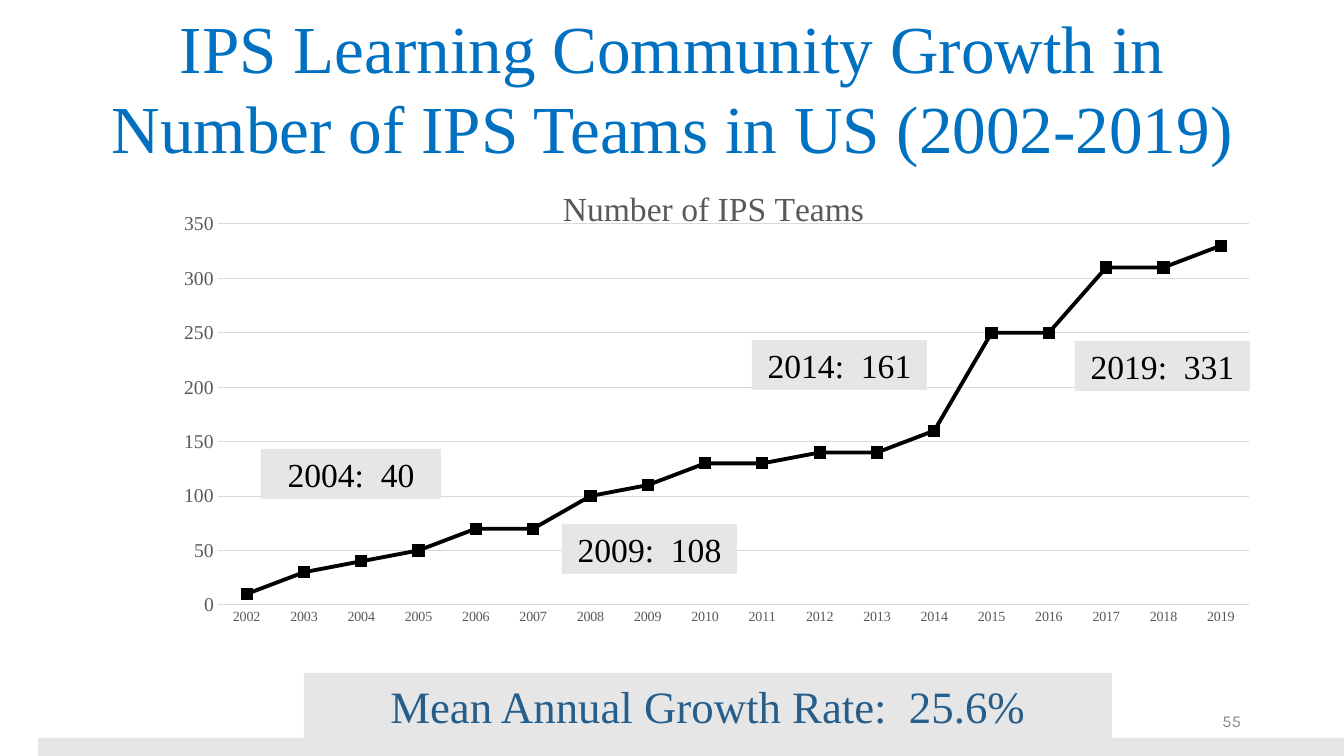
from lxml import etree
from pptx import Presentation
from pptx.chart.data import CategoryChartData
from pptx.dml.color import RGBColor
from pptx.enum.chart import XL_CHART_TYPE as ChartType, XL_MARKER_STYLE as Marker
from pptx.enum.chart import XL_TICK_MARK as Tick
from pptx.enum.shapes import MSO_SHAPE as Shape
from pptx.enum.text import MSO_ANCHOR as Anchor, PP_ALIGN as Align
from pptx.oxml.ns import qn
from pptx.util import Pt

PX = 12192000 / 1344
SERIF = "Times New Roman"
BLACK, GREY, RULE, PANEL = "000000", "595959", "D9D9D9", "E7E6E6"
TEAMS = [10, 30, 40, 50, 70, 70, 100, 110, 130, 130, 140, 140, 160,
         250, 250, 310, 310, 330]
FIRST_YEAR = 2002
LABELS = {"2004:  40": (261, 449, 180, 50), "2009:  108": (562, 524, 175, 50),
          "2019:  331": (1075, 341, 175, 50), "2014:  161": (752, 340, 175, 50)}


def emu(box):
    return [round(length * PX) for length in box]


def colour(code):
    return RGBColor.from_string(code)


def style(font, size, code, name=SERIF):
    font.size, font.name = Pt(size), name
    font.color.rgb = colour(code)


def write(frame, text, size, code, align=Align.CENTER, name=SERIF):
    frame.text = text
    frame.word_wrap = True
    frame.vertical_anchor = Anchor.MIDDLE
    for para in frame.paragraphs:
        para.alignment = align
        for span in para.runs:
            style(span.font, size, code, name)


def add_title(page, box, text):
    title = page.shapes.title
    title.left, title.top, title.width, title.height = emu(box)
    write(title.text_frame, text, 48, "0070C0")


def add_panel(page, box, text="", size=24, code=BLACK):
    panel = page.shapes.add_shape(Shape.RECTANGLE, *emu(box))
    panel.shadow.inherit = False
    panel.fill.solid()
    panel.fill.fore_color.rgb = colour(PANEL)
    panel.line.fill.background()
    if text:
        write(panel.text_frame, text, size, code)


def add_page_number(page, box, number):
    holder = page.shapes.add_textbox(*emu(box))
    write(holder.text_frame, number, 12, "8C8C8C", Align.RIGHT, "Karla")


def set_layout(parent, index, **settings):
    """Give a chart part a manual layout, as fractions of the chart."""
    for old in parent.findall(qn("c:layout")):
        parent.remove(old)
    layout = etree.Element(qn("c:layout"))
    manual = etree.SubElement(layout, qn("c:manualLayout"))
    for tag, value in settings.items():
        etree.SubElement(manual, qn(f"c:{tag}")).set("val", str(value))
    parent.insert(index, layout)


def add_growth_chart(page, box):
    data = CategoryChartData()
    data.categories = [str(FIRST_YEAR + i) for i in range(len(TEAMS))]
    data.add_series("Series 1", TEAMS)
    chart = page.shapes.add_chart(ChartType.LINE_MARKERS, *emu(box), data).chart
    style(chart.font, 10, BLACK, "Karla")
    chart.has_legend = False

    width, height = box[2:]
    heading = chart.chart_title
    heading.text_frame.text = "Number of IPS Teams"
    heading_font = heading.text_frame.paragraphs[0].runs[0].font
    style(heading_font, 24, GREY)
    heading_font.bold = False
    heading.include_in_layout = True
    set_layout(heading._element, 1, xMode="edge", yMode="edge",
               x=425 / width, y=0)
    set_layout(chart._chartSpace.chart.plotArea, 0, layoutTarget="inner",
               xMode="edge", yMode="edge", x=86 / width, y=43 / height,
               w=1032 / width, h=381 / height)

    years, counts = chart.category_axis, chart.value_axis
    for axis, size in ((years, 10), (counts, 14)):
        style(axis.tick_labels.font, size, GREY)
        axis.major_tick_mark = axis.minor_tick_mark = Tick.NONE
    counts.minimum_scale, counts.maximum_scale, counts.major_unit = 0, 350, 50
    counts.format.line.fill.background()
    for line in (years.format.line, counts.major_gridlines.format.line):
        line.width = Pt(0.75)
        line.color.rgb = colour(RULE)

    chart.plots[0].vary_by_categories = False
    series = chart.plots[0].series[0]
    series.smooth = False
    series.format.line.width = Pt(2.75)
    series.format.line.color.rgb = colour(BLACK)
    series.marker.style, series.marker.size = Marker.SQUARE, 8
    series.marker.format.fill.solid()
    series.marker.format.fill.fore_color.rgb = colour(BLACK)
    series.marker.format.line.color.rgb = colour(BLACK)


def main():
    deck = Presentation()
    deck.slide_width, deck.slide_height = emu((1344, 756))
    page = deck.slides.add_slide(deck.slide_layouts[5])
    add_page_number(page, (949, 701, 302, 40), "55")
    add_panel(page, (38, 738, 1306, 57))
    add_title(page, (10, 0, 1325, 173), "IPS Learning Community Growth in\n"
              "Number of IPS Teams in US (2002-2019)")
    add_panel(page, (304, 673, 808, 65), "Mean Annual Growth Rate:  25.6%",
              32, "255D8B")
    add_growth_chart(page, (132, 181, 1118, 493))
    for text, box in LABELS.items():
        add_panel(page, box, text)
    deck.save("out.pptx")


if __name__ == "__main__":
    main()
